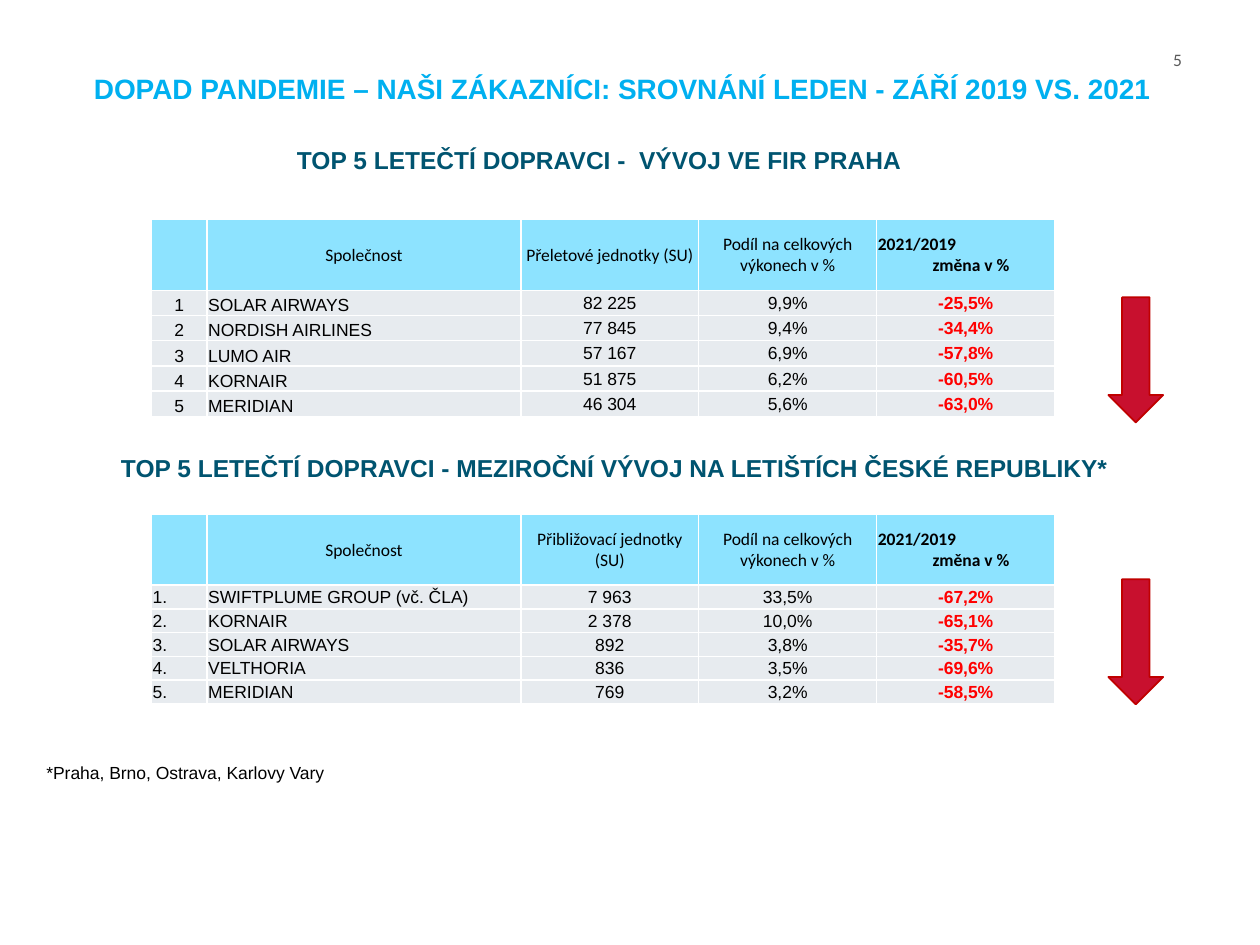
from pptx import Presentation, util as u
from pptx.dml.color import RGBColor
from pptx.enum import shapes, text
from pptx.oxml.ns import qn
from lxml import etree

Pt = u.Pt
WHITE = RGBColor(0xFF, 0xFF, 0xFF)
BLACK = RGBColor(0, 0, 0)
GREY = RGBColor(0x5A, 0x5A, 0x5A)
SKY = RGBColor(0x00, 0xB0, 0xF0)
TEAL = RGBColor(0x00, 0x54, 0x70)
HEAD = RGBColor(0x8D, 0xE3, 0xFF)
BODY = RGBColor(0xE7, 0xEB, 0xEF)
RED = RGBColor(0xFF, 0, 0)
ARROW = RGBColor(0xC8, 0x10, 0x2E)
ARROW_LINE = RGBColor(0xC0, 0, 0)
LEFT, CENTER = text.PP_ALIGN.LEFT, text.PP_ALIGN.CENTER
TOP, MIDDLE, BOTTOM = (text.MSO_ANCHOR.TOP, text.MSO_ANCHOR.MIDDLE,
                       text.MSO_ANCHOR.BOTTOM)

prs = Presentation()
prs.slide_width, prs.slide_height = Pt(720), Pt(540)
s = prs.slides.add_slide(prs.slide_layouts[6])


def add_run(p, txt, size, color, bold=False, font="Arial", align=LEFT):
    p.alignment = align
    r = p.add_run()
    r.text = txt
    r.font.size, r.font.bold, r.font.name = Pt(size), bold, font
    r.font.color.rgb = color


def add_text(x, y, w, h, txt, size, color, bold=False, font="Arial",
             align=LEFT, inset=7.2, anchor=TOP):
    tf = s.shapes.add_textbox(Pt(x), Pt(y), Pt(w), Pt(h)).text_frame
    tf.word_wrap = True
    tf.vertical_anchor = anchor
    tf.margin_left = tf.margin_right = Pt(inset)
    add_run(tf.paragraphs[0], txt, size, color, bold, font, align)
    return tf.paragraphs[0]


# Slide number and title
add_text(670.3, 24.5, 46, 19.4, "5", 10, GREY, font="Calibri", inset=0)
title = add_text(26.6, 36, 653, 28.8,
                 "DOPAD PANDEMIE – NAŠI ZÁKAZNÍCI: SROVNÁNÍ LEDEN - ZÁŘÍ 2019 VS. 2021",
                 16, SKY, True, anchor=MIDDLE)
title._p.get_or_add_pPr().set("marL", str(Pt(20)))

# Table headings and footnote
add_text(75, 79.2, 535, 24.5, "TOP 5 LETEČTÍ DOPRAVCI -  VÝVOJ VE FIR PRAHA",
         14, TEAL, True, align=CENTER)
add_text(60, 255.6, 582.5, 24.5,
         "TOP 5 LETEČTÍ DOPRAVCI - MEZIROČNÍ VÝVOJ NA LETIŠTÍCH ČESKÉ REPUBLIKY*",
         14, TEAL, True, align=CENTER)
add_text(19.4, 432, 535, 19.4, "*Praha, Brno, Ostrava, Karlovy Vary", 10, BLACK)

# Tables: top, row height, units heading, rank alignment, name anchor, rows
TABLES = [
    (125.3, 14.4, "Přeletové jednotky (SU)", CENTER, BOTTOM, [
        ("1", "SOLAR AIRWAYS", "82 225", "9,9%", "-25,5%"),
        ("2", "NORDISH AIRLINES", "77 845", "9,4%", "-34,4%"),
        ("3", "LUMO AIR", "57 167", "6,9%", "-57,8%"),
        ("4", "KORNAIR", "51 875", "6,2%", "-60,5%"),
        ("5", "MERIDIAN", "46 304", "5,6%", "-63,0%")]),
    (293.8, 13.55, "Přibližovací jednotky (SU)", LEFT, MIDDLE, [
        ("1.", "SWIFTPLUME GROUP (vč. ČLA)", "7 963", "33,5%", "-67,2%"),
        ("2.", "KORNAIR", "2 378", "10,0%", "-65,1%"),
        ("3.", "SOLAR AIRWAYS", "892", "3,8%", "-35,7%"),
        ("4.", "VELTHORIA", "836", "3,5%", "-69,6%"),
        ("5.", "MERIDIAN", "769", "3,2%", "-58,5%")]),
]
COLS = [31.7, 179.3, 101.7, 101.7, 101.7]
HEAD_H = 40.6

for top, row_h, units, rank_align, name_anchor, rows in TABLES:
    tbl = s.shapes.add_table(6, 5, Pt(86.6), Pt(top), Pt(sum(COLS)),
                             Pt(HEAD_H + 5 * row_h)).table
    for col, w in zip(tbl.columns, COLS):
        col.width = Pt(w)
    for i, row in enumerate(tbl.rows):
        row.height = Pt(row_h if i else HEAD_H)
    header = ("", "Společnost", units, "Podíl na celkových výkonech v %", "2021/2019")
    aligns = (rank_align, LEFT, CENTER, CENTER, CENTER)
    for i, values in enumerate([header] + rows):
        for j, value in enumerate(values):
            cell = tbl.cell(i, j)
            cell.margin_left = cell.margin_right = cell.margin_top = Pt(0.7)
            cell.margin_bottom = 0
            cell.vertical_anchor = name_anchor if i and j < 2 else MIDDLE
            p = cell.text_frame.paragraphs[0]
            last = j == 4
            if i:
                add_run(p, value, 10, RED if last else BLACK, last, align=aligns[j])
            elif value:
                add_run(p, value, 10, BLACK, last, "Calibri", LEFT if last else CENTER)
            if last and not i:
                p = cell.text_frame.add_paragraph()
                add_run(p, "změna v %", 10, BLACK, True, "Calibri", CENTER)
                p._p.get_or_add_pPr().set("marL", str(Pt(6)))
            # White borders go before the fill
            tcPr = cell._tc.get_or_add_tcPr()
            for side in ("lnL", "lnR", "lnT", "lnB"):
                ln = etree.SubElement(tcPr, qn("a:" + side), w=str(Pt(1)))
                fill = etree.SubElement(ln, qn("a:solidFill"))
                etree.SubElement(fill, qn("a:srgbClr"), val=str(WHITE))
            cell.fill.solid()
            cell.fill.fore_color.rgb = BODY if i else HEAD

# Falling arrows beside the tables
for y in (169.9, 331):
    sp = s.shapes.add_shape(shapes.MSO_SHAPE.DOWN_ARROW, Pt(633.4), Pt(y),
                            Pt(31.3), Pt(71.5))
    sp.shadow.inherit = False
    sp.fill.solid()
    sp.fill.fore_color.rgb = ARROW
    sp.line.color.rgb = ARROW_LINE
    sp.line.width = Pt(1)

prs.save("out.pptx")
